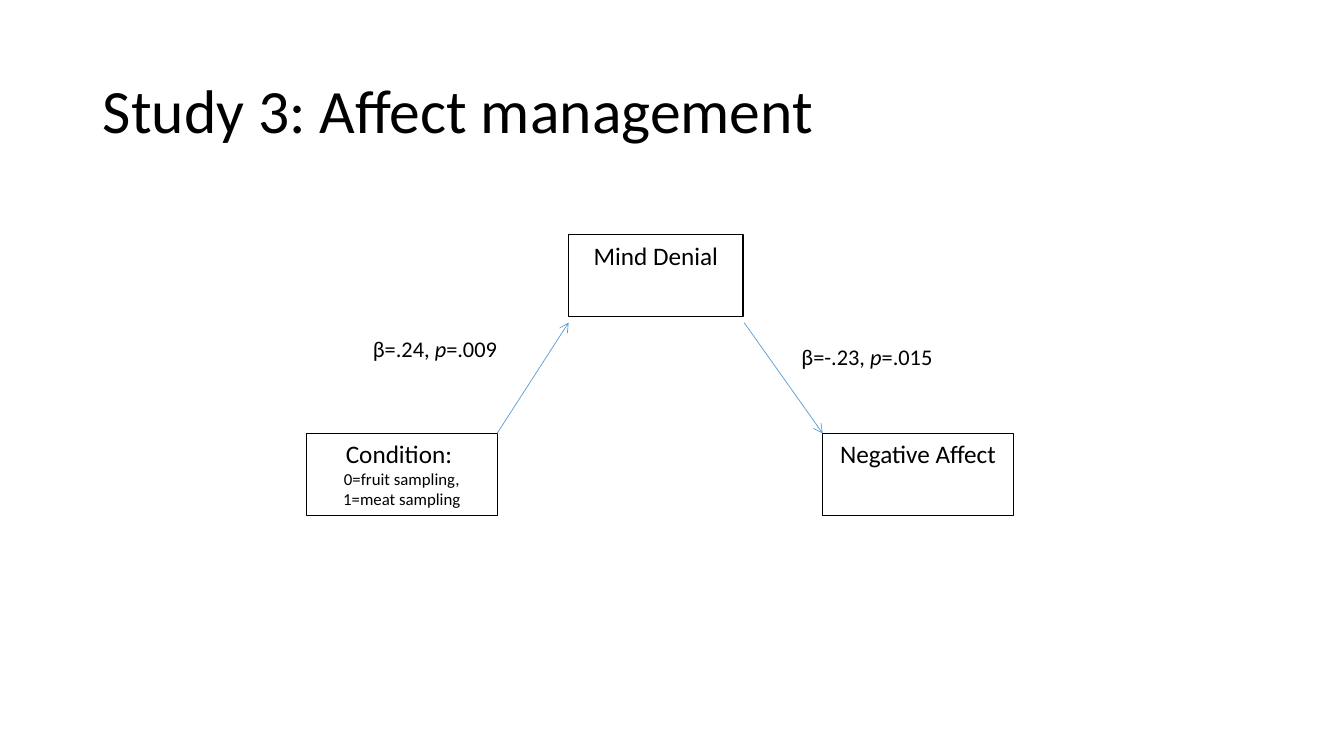
import pptx
import pptx.util
import pptx.dml.color
import pptx.enum.shapes
import pptx.enum.text
import pptx.oxml
import pptx.oxml.ns

Inches = pptx.util.Inches
Pt = pptx.util.Pt
ALIGN = pptx.enum.text.PP_ALIGN
ANCHOR = pptx.enum.text.MSO_ANCHOR
COLORS = {"ink": "000000", "arrow": "5B9BD5"}
FONT = "Calibri"


def color(name):
    return pptx.dml.color.RGBColor.from_string(COLORS[name])


def write(frame, *lines, align=ALIGN.LEFT, anchor=ANCHOR.TOP, space=1.0):
    frame.word_wrap = True
    frame.auto_size = pptx.enum.text.MSO_AUTO_SIZE.NONE
    frame.vertical_anchor = anchor
    for i, (size, *parts) in enumerate(lines):
        para = frame.add_paragraph() if i else frame.paragraphs[0]
        para.alignment = align
        para.line_spacing = space
        for text, slant in parts:
            run = para.add_run()
            run.text = text
            run.font.name = FONT
            run.font.size = Pt(size)
            run.font.italic = slant
            run.font.color.rgb = color("ink")


def head(slide, text):
    title = slide.shapes.title
    title.left, title.top = Inches(0.92), Inches(0.4)
    title.width, title.height = Inches(11.5), Inches(1.45)
    write(title.text_frame, (44, (text, False)), anchor=ANCHOR.MIDDLE, space=0.9)


def box(slide, left, top, width, *lines):
    rect = slide.shapes.add_shape(
        pptx.enum.shapes.MSO_SHAPE.RECTANGLE,
        Inches(left), Inches(top), Inches(width), Inches(0.81))
    rect.shadow.inherit = False
    rect.fill.background()
    rect.line.color.rgb = color("ink")
    rect.line.width = Pt(0.75)
    write(rect.text_frame, *[(size, (text, False)) for text, size in lines],
          align=ALIGN.CENTER)


def arrow(slide, x1, y1, x2, y2):
    line = slide.shapes.add_connector(
        pptx.enum.shapes.MSO_CONNECTOR.STRAIGHT,
        Inches(x1), Inches(y1), Inches(x2), Inches(y2))
    line.line.color.rgb = color("arrow")
    line.line.width = Pt(0.5)
    names = pptx.oxml.ns.nsdecls("a")
    line.line._get_or_add_ln().append(
        pptx.oxml.parse_xml(f'<a:tailEnd {names} type="arrow"/>'))
    line._element.spPr.append(pptx.oxml.parse_xml(f"<a:effectLst {names}/>"))


def label(slide, left, top, width, beta, prob):
    area = slide.shapes.add_textbox(
        Inches(left), Inches(top), Inches(width), Inches(0.37))
    write(area.text_frame,
          (16, (f"β={beta}, ", False), ("p", True), (f"={prob}", False)))


def main():
    deck = pptx.Presentation()
    deck.slide_width, deck.slide_height = Inches(13.33), Inches(7.5)
    slide = deck.slides.add_slide(deck.slide_layouts[5])
    head(slide, "Study 3: Affect management")
    box(slide, 3.04, 4.3, 1.89, ("Condition: ", 18),
        ("0=fruit sampling, 1=meat sampling", 12))
    box(slide, 8.16, 4.3, 1.89, ("Negative Affect", 18))
    box(slide, 5.64, 2.33, 1.73, ("Mind Denial", 18))
    arrow(slide, 4.93, 4.3, 5.64, 3.2)
    arrow(slide, 7.38, 3.2, 8.16, 4.3)
    label(slide, 3.6, 3.28, 1.73, ".24", ".009")
    label(slide, 7.85, 3.36, 1.65, "-.23", ".015")
    deck.save("out.pptx")


if __name__ == "__main__":
    main()
